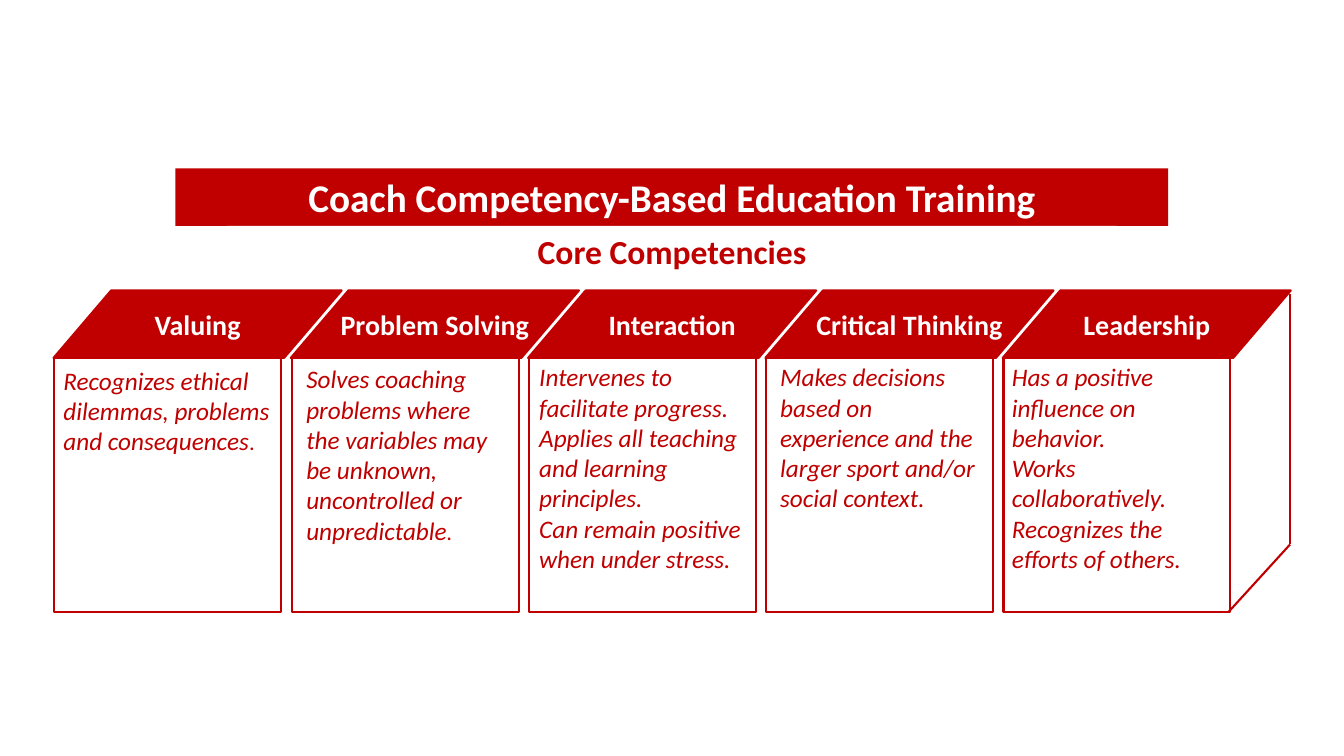
"""Build the core competencies slide: a title banner over a row of five boxes."""
from lxml.etree import SubElement
from pptx import Presentation
from pptx.dml.color import RGBColor
from pptx.enum.shapes import MSO_CONNECTOR, MSO_SHAPE
from pptx.enum.text import MSO_ANCHOR, MSO_AUTO_SIZE, PP_ALIGN
from pptx.oxml.ns import qn
from pptx.util import Cm, Pt

RED, WHITE = "C00000", "FFFFFF"
TITLE = "Coach Competency-Based Education Training"
SUBTITLE = "Core Competencies"

BODY = {"size": Pt(18), "italic": True}
SMALL = {"size": Pt(16), "italic": True}
SMALL_UPRIGHT = {"size": Pt(16), "italic": False}
LABEL = {"size": Pt(20), "bold": True}

# name, label width, text box (left, top, width, height), paragraphs of runs
COMPETENCIES = [
    ("Valuing", 2.69, (1.35, 9.07, 5.97, 2.57),
     [[("Recognizes ethical dilemmas, problems and consequences", BODY),
       (".", SMALL_UPRIGHT)]]),
    ("Problem Solving", 5.31, (7.47, 9.04, 5.54, 4.88),
     [[("Solves coaching problems where the variables may be unknown, "
        "uncontrolled or unpredictable", BODY), (".", SMALL)]]),
    ("Interaction", 3.76, (13.34, 8.99, 5.72, 5.64),
     [[("Intervenes to facilitate progress.", BODY)],
      [("Applies all teaching and learning principles.", BODY)],
      [("Can remain positive when under stress.", BODY)]]),
    ("Critical Thinking", 5.26, (19.41, 8.99, 5.59, 4.11),
     [[("Makes decisions based on experience and the larger sport and/or "
        "social context.", BODY)]]),
    ("Leadership", 3.73, (25.25, 8.99, 5.97, 5.64),
     [[("Has a positive influence on behavior.", BODY)],
      [("Works collaboratively.", BODY)],
      [("Recognizes the efforts of others.", BODY)]]),
]

LEFT, PITCH = 1.35, 5.98
LID_TOP, LID_W, LID_H = 7.32, 7.26, 1.7
FRONT_W, FRONT_H = 5.72, 6.4
FRONT_TOP = LID_TOP + LID_H
LABEL_TOP, LABEL_H = 7.63, 1.11
SIDE_EDGES = [(32.51, 7.42, 32.51, 13.72), (32.51, 13.72, 30.96, 15.42)]


def rgb(color):
    return RGBColor.from_string(color)


def outline(line, color):
    line.color.rgb = rgb(color)
    line.width = Pt(1.5)


def add_box(s, kind, box, fill=None, line=None):
    sp = s.shapes.add_shape(kind, *map(Cm, box))
    sp.shadow.inherit = False
    if fill:
        sp.fill.solid()
        sp.fill.fore_color.rgb = rgb(fill)
    else:
        sp.fill.background()
    if line:
        outline(sp.line, line)
    else:
        sp.line.fill.background()
    return sp


def write(sp, paragraphs, color, align=PP_ALIGN.LEFT, wrap=True,
          anchor=MSO_ANCHOR.TOP):
    tf = sp.text_frame
    tf.word_wrap = wrap
    tf.auto_size = MSO_AUTO_SIZE.NONE
    tf.vertical_anchor = anchor
    for i, runs in enumerate(paragraphs):
        p = tf.add_paragraph() if i else tf.paragraphs[0]
        p.alignment = align
        for text, formats in runs:
            r = p.add_run()
            r.text = text
            r.font.name = "Calibri"
            r.font.color.rgb = rgb(color)
            for key, value in formats.items():
                setattr(r.font, key, value)


def add_text(s, box, *args, **kwargs):
    write(s.shapes.add_textbox(*map(Cm, box)), *args, **kwargs)


def main():
    prs = Presentation()
    prs.slide_width, prs.slide_height = Cm(33.87), Cm(19.05)
    s = prs.slides.add_slide(prs.slide_layouts[5])

    title = s.shapes.title
    title.left, title.top, title.width, title.height = map(
        Cm, (4.42, 4.24, 25.02, 1.45))
    title.fill.solid()
    title.fill.fore_color.rgb = rgb(RED)
    write(title, [[(TITLE, {"size": Pt(28), "bold": True})]], WHITE,
          PP_ALIGN.CENTER, anchor=MSO_ANCHOR.MIDDLE)

    subtitle = add_box(s, MSO_SHAPE.RECTANGLE, (5.72, 5.69, 22.43, 1.27), WHITE)
    write(subtitle, [[(SUBTITLE, {"size": Pt(24), "bold": True})]], RED,
          PP_ALIGN.CENTER)

    lefts = [LEFT + i * PITCH for i in range(len(COMPETENCIES))]
    for x in lefts:
        add_box(s, MSO_SHAPE.FLOWCHART_DATA, (x, LID_TOP, LID_W, LID_H), RED, RED)
        add_box(s, MSO_SHAPE.RECTANGLE, (x + 0.02, FRONT_TOP, FRONT_W, FRONT_H),
                line=RED)

    for x, (name, width, box, paragraphs) in zip(lefts, COMPETENCIES):
        label = (x + (LID_W - width) / 2, LABEL_TOP, width, LABEL_H)
        add_text(s, label, [[(name, LABEL)]], WHITE, PP_ALIGN.CENTER, wrap=False)
        add_text(s, box, paragraphs, RED)

    for edge in SIDE_EDGES:
        side = s.shapes.add_connector(MSO_CONNECTOR.STRAIGHT, *map(Cm, edge))
        outline(side.line, RED)
        SubElement(side._element.spPr, qn("a:effectLst"))

    prs.save("out.pptx")


if __name__ == "__main__":
    main()
